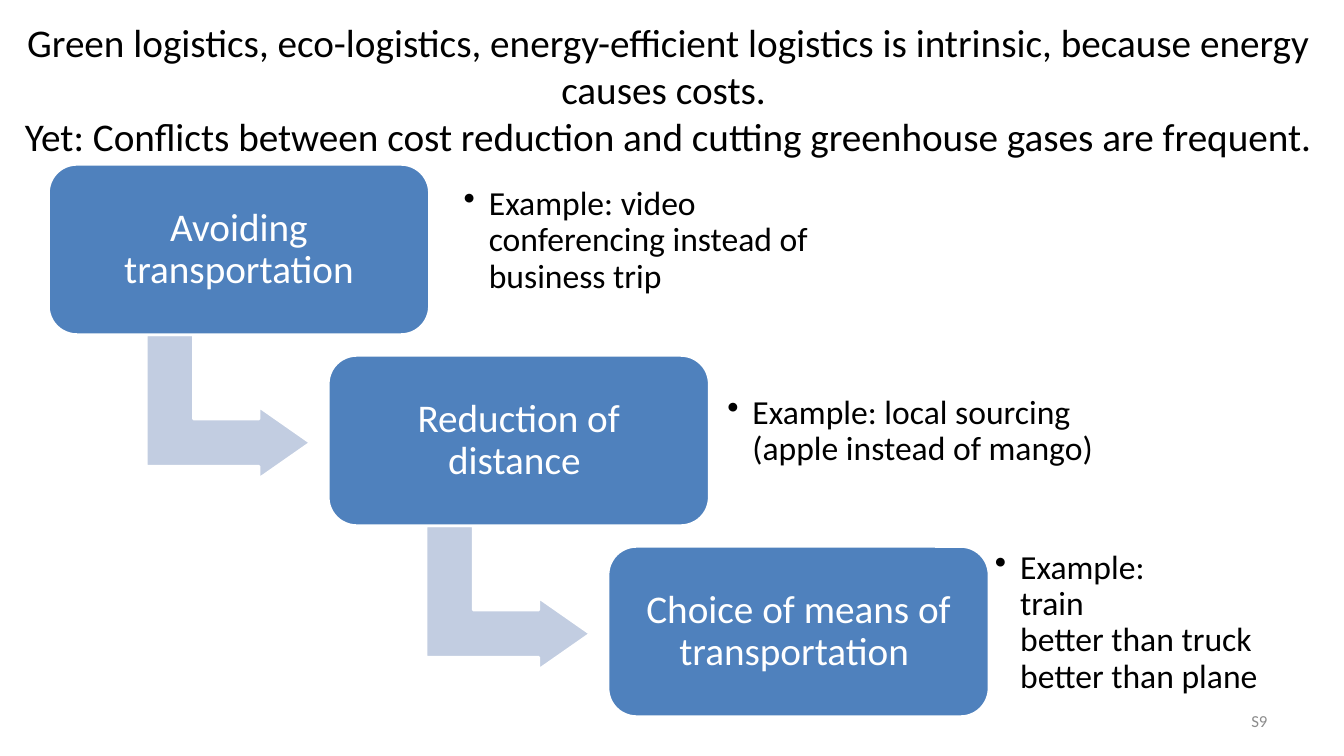
from dataclasses import dataclass

from lxml.etree import SubElement
from pptx import Presentation
from pptx.dml.color import RGBColor
from pptx.enum.shapes import MSO_SHAPE as Shape
from pptx.enum.text import MSO_ANCHOR as Anchor, MSO_AUTO_SIZE as AutoSize, PP_ALIGN as Align
from pptx.oxml.ns import qn
from pptx.util import Inches, Pt

# Staircase grid in inches: each step moves one column right and one row down
LEFT, TOP = 0.48, 1.63
COL, ROW = 2.775, 1.895
BOX_W, BOX_H = 3.78, 1.69
ARROW_W, ARROW_H = 1.43, 1.63
BLUE, PALE, WHITE, BLACK, GREY = "4F81BD", "C2CDE1", "FFFFFF", "000000", "8C8C8C"


@dataclass
class Step:
    label: str
    example: str
    gap: float  # from the box to its example
    width: float  # of the example


STEPS = [
    Step("Avoiding transportation",
         "Example: video conferencing instead of business trip", 0.24, 3.62),
    Step("Reduction of distance ",
         "Example: local sourcing (apple instead of mango)", 0.08, 3.9),
    Step("Choice of means of transportation ",
         "Example:\ntrain \nbetter than truck better than plane", -0.04, 2.87),
]


def rgb(value: str) -> RGBColor:
    return RGBColor.from_string(value)


def box(x: float, y: float, w: float, h: float) -> tuple:
    return tuple(Inches(v) for v in (x, y, w, h))


def write(sp, lines: list, size: float, color: str, align, spacing: float = 1.0,
          inset: float = 0.1, anchor=Anchor.MIDDLE) -> None:
    tf = sp.text_frame
    frame = {"word_wrap": True, "auto_size": AutoSize.NONE, "vertical_anchor": anchor}
    frame |= {f"margin_{side}": Inches(inset) for side in ("left", "right", "top", "bottom")}
    for name, value in frame.items():
        setattr(tf, name, value)
    for i, line in enumerate(lines):
        p = tf.paragraphs[0] if i == 0 else tf.add_paragraph()
        p.text, p.alignment, p.line_spacing = line, align, spacing
        for r in p.runs:
            for name, value in {"name": "Calibri", "size": Pt(size)}.items():
                setattr(r.font, name, value)
            r.font.color.rgb = rgb(color)


def add_block(slide, kind, place: tuple, fill: str, adjust: list):
    sp = slide.shapes.add_shape(kind, *place)
    sp.shadow.inherit = False
    sp.fill.solid()
    sp.fill.fore_color.rgb = rgb(fill)
    sp.line.color.rgb = rgb(WHITE)
    sp.line.width = Pt(2)
    for i, value in enumerate(adjust):
        sp.adjustments[i] = value
    return sp


def add_bullet(p) -> None:
    pPr = p._p.get_or_add_pPr()
    pPr.set("marL", str(Inches(0.25)))
    pPr.set("indent", str(-Inches(0.25)))
    SubElement(pPr, qn("a:buChar")).set("char", "•")


def add_step(slide, i: int, step: Step) -> None:
    x, y = LEFT + i * COL, TOP + i * ROW
    # Arrow down to the next step
    if i < len(STEPS) - 1:
        arrow = add_block(slide, Shape.BENT_UP_ARROW,
                          box(x + 1.07, y + 1.59, ARROW_W, ARROW_H),
                          PALE, [0.328, 0.25, 0.358])
        arrow.rotation = 90
    # Labelled box
    sp = add_block(slide, Shape.ROUNDED_RECTANGLE, box(x, y, BOX_W, BOX_H), BLUE, [0.167])
    write(sp, [step.label], 28, WHITE, Align.CENTER, 0.9, 0.12)
    # Example beside it
    note = slide.shapes.add_textbox(*box(x + BOX_W + step.gap, y + 0.08, step.width, 1.36))
    write(note, [step.example], 24, BLACK, Align.LEFT, 0.9)
    add_bullet(note.text_frame.paragraphs[0])


def main() -> None:
    prs = Presentation()
    prs.slide_width, prs.slide_height = Inches(13.33), Inches(7.5)
    slide = prs.slides.add_slide(prs.slide_layouts[5])

    # Title
    title = slide.shapes.title
    title.left, title.top, title.width, title.height = box(0.13, 0.13, 12.99, 1.51)
    write(title, [
        "Green logistics, eco-logistics, energy-efficient logistics is intrinsic, "
        "because energy causes costs. ",
        "Yet: Conflicts between cost reduction and cutting greenhouse gases are frequent.  ",
    ], 28, BLACK, Align.CENTER, anchor=Anchor.TOP)
    title.text_frame.margin_top = Inches(0.05)

    # Slide number
    number = slide.shapes.add_textbox(*box(9.56, 6.95, 3.11, 0.4))
    write(number, ["S9"], 12, GREY, Align.RIGHT)

    # Staircase
    for i, step in enumerate(STEPS):
        add_step(slide, i, step)

    prs.save("out.pptx")


if __name__ == "__main__":
    main()
